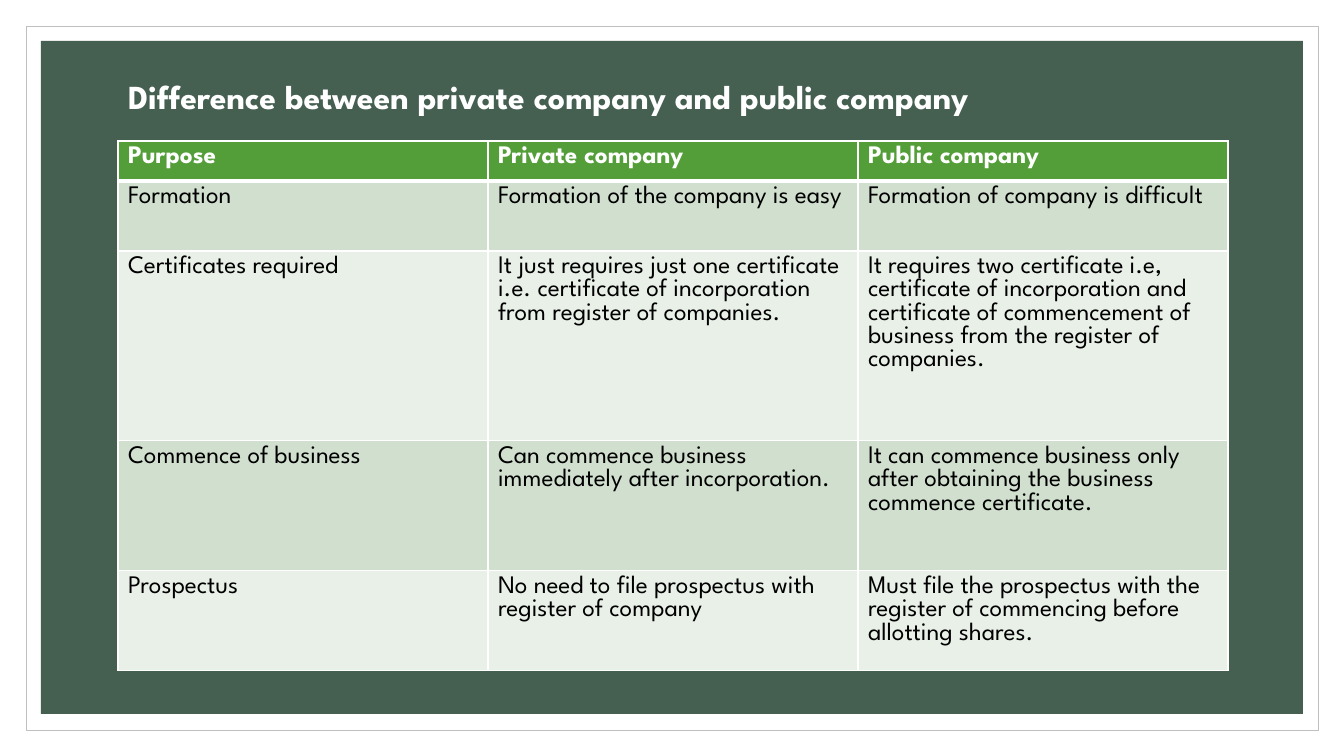
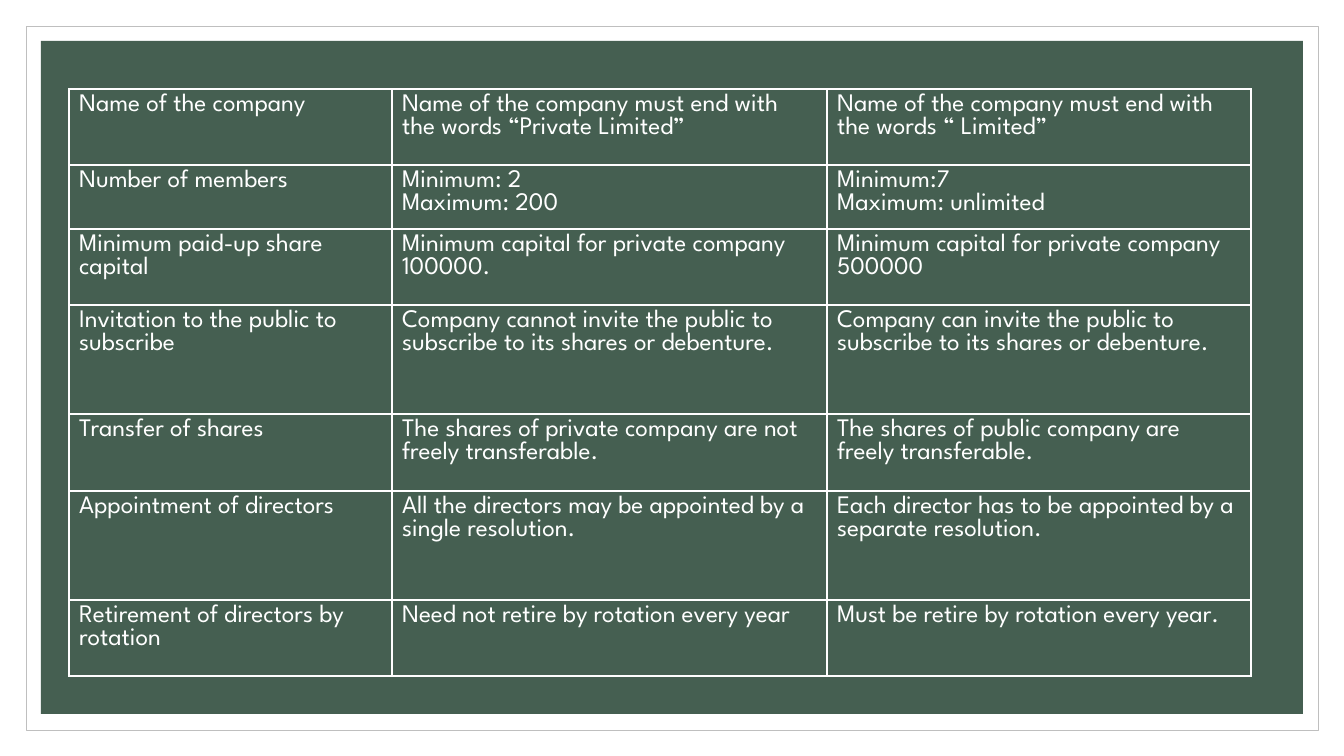
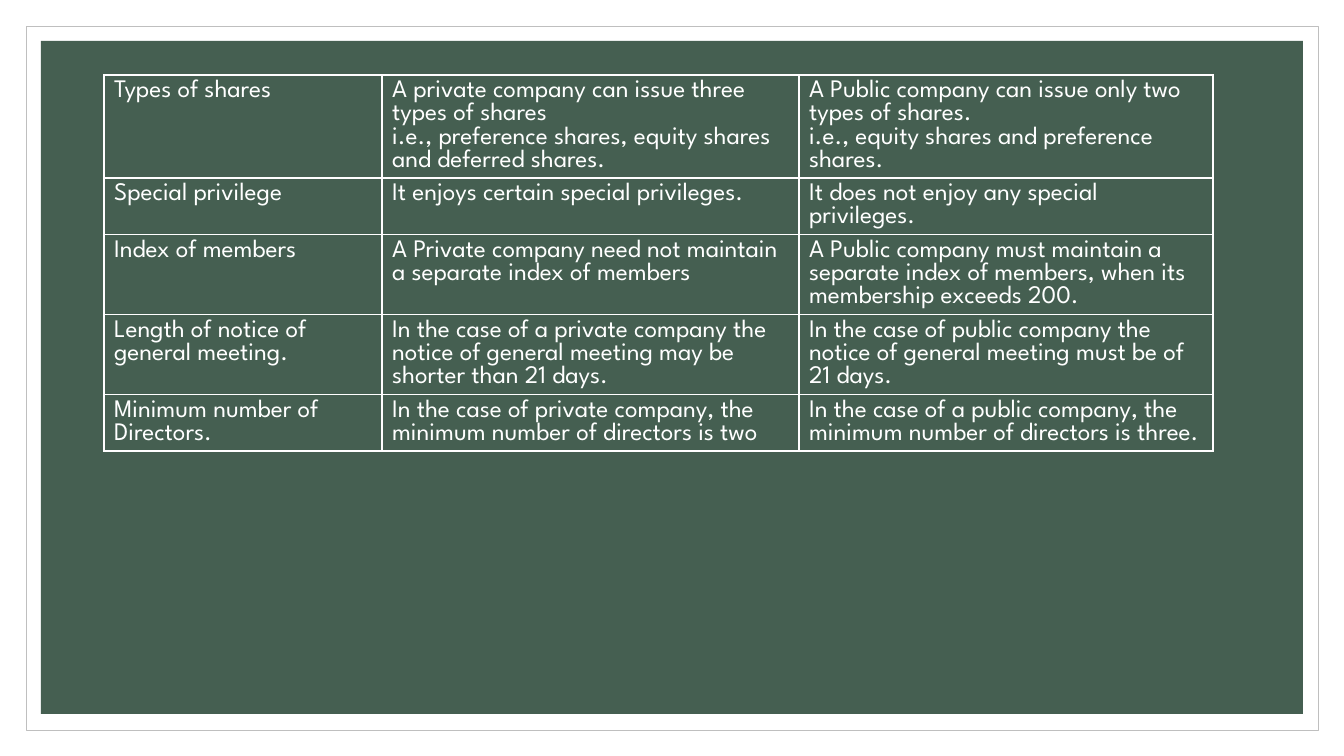
from lxml import etree
from pptx import Presentation
from pptx.dml.color import RGBColor
from pptx.enum.shapes import MSO_SHAPE
from pptx.enum.text import MSO_ANCHOR, MSO_AUTO_SIZE, PP_ALIGN
from pptx.oxml.ns import qn
from pptx.util import Emu, Pt

RECTANGLE = MSO_SHAPE.RECTANGLE
MIDDLE = MSO_ANCHOR.MIDDLE
NO_AUTOFIT = MSO_AUTO_SIZE.NONE
LEFT = PP_ALIGN.LEFT

# Palette
WHITE = RGBColor(0xFF, 0xFF, 0xFF)
BLACK = RGBColor(0x00, 0x00, 0x00)
FRAME_GREY = RGBColor(0xBF, 0xBF, 0xBF)
PANEL_GREEN = RGBColor(0x45, 0x5F, 0x51)
HEADER_GREEN = RGBColor(0x54, 0x9E, 0x39)
BANDS = (RGBColor(0xD1, 0xDF, 0xCE), RGBColor(0xE9, 0xF0, 0xE8))

# Shared formats
FONT = "League Spartan"
TITLE_FONT = {"name": FONT, "size": Pt(24), "bold": True}
HEADER_FONT = {"name": FONT, "size": Pt(18), "bold": True}
CELL_FONT = {"name": FONT, "size": Pt(18), "bold": False}
PLAIN_TABLE = {"first_row": False, "horz_banding": False}
THIN, THICK = 1, 3

SLIDE_W, SLIDE_H = 1344, 756
TITLE_ONLY, BLANK = 5, 6

# Comparison content: purpose, private company, public company
BASICS = [
    ("Purpose", "Private company", "Public company"),
    ("Formation", "Formation of the company is easy",
     "Formation of company is difficult"),
    ("Certificates required",
     "It just requires just one certificate i.e. certificate of "
     "incorporation from register of companies.",
     "It requires two certificate i.e, certificate of incorporation and "
     "certificate of commencement of business from the register of companies."),
    ("Commence of business",
     "Can commence business immediately after incorporation.",
     "It can commence business only after obtaining the business commence "
     "certificate."),
    ("Prospectus", "No need to file prospectus with register of company",
     "Must file the prospectus with the register of commencing before "
     "allotting shares."),
]
MEMBERS_AND_DIRECTORS = [
    ("Name of the company",
     "Name of the company must end with the words “Private Limited”",
     "Name of the company must end with the words “ Limited”"),
    ("Number of members", "Minimum: 2\nMaximum: 200",
     "Minimum:7\nMaximum: unlimited"),
    ("Minimum paid-up share capital",
     "Minimum capital for private company 100000.",
     "Minimum capital for private company 500000"),
    ("Invitation to the public to subscribe",
     "Company cannot invite the public to subscribe to its shares or debenture.",
     "Company can invite the public to subscribe to its shares or debenture."),
    ("Transfer of shares",
     "The shares of private company are not freely transferable.",
     "The shares of public company are freely transferable."),
    ("Appointment of directors",
     "All the directors may be appointed by a single resolution.",
     "Each director has to be appointed by a separate resolution."),
    ("Retirement of directors by rotation",
     "Need not retire by rotation every year",
     "Must be retire by rotation every year."),
]
SHARES_AND_MEETINGS = [
    ("Types of shares",
     "A private company can issue three types of shares\n"
     "i.e., preference shares, equity shares and deferred shares.",
     "A Public company can issue only two types of shares.\n"
     "i.e., equity shares and preference shares."),
    ("Special privilege", "It enjoys certain special privileges.",
     "It does not enjoy any special privileges."),
    ("Index of members",
     "A Private company need not maintain a separate index of members",
     "A Public company must maintain a separate index of members, when its "
     "membership exceeds 200."),
    ("Length of notice of general meeting.",
     "In the case of a private company the notice of general meeting may be "
     "shorter than 21 days.",
     "In the case of public company the notice of general meeting must be of "
     "21 days."),
    ("Minimum number of Directors.",
     "In the case of private company, the minimum number of directors is two",
     "In the case of a public company, the minimum number of directors is "
     "three."),
]


def px(length):
    return Emu(round(length * 12192000 / SLIDE_W))


def apply_format(target, values):
    for name, value in values.items():
        setattr(target, name, value)


def style_text(text_frame, font_format, color):
    for paragraph in text_frame.paragraphs:
        for run in paragraph.runs:
            apply_format(run.font, font_format)
            run.font.color.rgb = color


def add_master_frame(master, slide):
    """Build the white frame and green panel, then move them to the master."""
    for index, (inset, width, height, fill, line) in enumerate([
        (26, 1292, 704, WHITE, FRAME_GREY),
        (41, 1262, 673, PANEL_GREEN, None),
    ]):
        panel = slide.shapes.add_shape(
            RECTANGLE, px(inset), px(inset), px(width), px(height))
        panel.shadow.inherit = False
        panel.fill.solid()
        panel.fill.fore_color.rgb = fill
        if line is None:
            panel.line.fill.background()
        else:
            panel.line.color.rgb = line
            panel.line.width = Pt(0.5)
        master.shapes.element.insert(2 + index, panel.element)


def set_title(slide, text):
    title = slide.shapes.title
    apply_format(title, {"left": px(118), "top": px(71),
                         "width": px(1110), "height": px(56)})
    frame = title.text_frame
    frame.text = text
    apply_format(frame, {"vertical_anchor": MIDDLE, "auto_size": NO_AUTOFIT,
                         "word_wrap": True})
    apply_format(frame.paragraphs[0], {"alignment": LEFT, "line_spacing": 0.9})
    style_text(frame, TITLE_FONT, WHITE)


def set_borders(cell, top=THIN, bottom=THIN):
    properties = cell._tc.get_or_add_tcPr()
    for edge, width in (("L", THIN), ("R", THIN), ("T", top), ("B", bottom)):
        line = etree.SubElement(properties, qn(f"a:ln{edge}"), w=str(Pt(width)))
        fill = etree.SubElement(line, qn("a:solidFill"))
        etree.SubElement(fill, qn("a:srgbClr"), val=str(WHITE))


def add_comparison(slide, left, top, columns, heights, rows, banded=False):
    table = slide.shapes.add_table(
        len(rows), len(columns), px(left), px(top),
        px(sum(columns)), px(sum(heights))).table
    apply_format(table, PLAIN_TABLE)
    for column, width in zip(table.columns, columns):
        column.width = px(width)
    for r, (height, texts) in enumerate(zip(heights, rows)):
        table.rows[r].height = px(height)
        is_header = banded and r == 0
        for c, text in enumerate(texts):
            cell = table.cell(r, c)
            cell.text = text
            # The rule under the header is shared by the first two rows
            set_borders(cell, top=THICK if banded and r == 1 else THIN,
                        bottom=THICK if is_header else THIN)
            if banded:
                cell.fill.solid()
                cell.fill.fore_color.rgb = (
                    HEADER_GREEN if is_header else BANDS[(r - 1) % 2])
            else:
                cell.fill.background()
            style_text(cell.text_frame, HEADER_FONT if is_header else CELL_FONT,
                       BLACK if banded and not is_header else WHITE)


def main():
    deck = Presentation()
    deck.slide_width, deck.slide_height = px(SLIDE_W), px(SLIDE_H)
    layouts = deck.slide_layouts

    # Basic differences
    basics = deck.slides.add_slide(layouts[TITLE_ONLY])
    add_master_frame(deck.slide_master, basics)
    set_title(basics, "Difference between private company and public company")
    add_comparison(basics, 118, 141, [370] * 3, [40, 70, 190, 130, 100],
                   BASICS, banded=True)

    # Members, capital and directors
    members = deck.slides.add_slide(layouts[BLANK])
    add_comparison(members, 69, 89, [323, 435, 424],
                   [76, 64, 76, 109, 77, 109, 76], MEMBERS_AND_DIRECTORS)

    # Shares and meetings
    shares = deck.slides.add_slide(layouts[BLANK])
    add_comparison(shares, 104, 75, [278, 417, 414],
                   [103, 56, 80, 80, 56], SHARES_AND_MEETINGS)

    deck.save("out.pptx")


if __name__ == "__main__":
    main()
